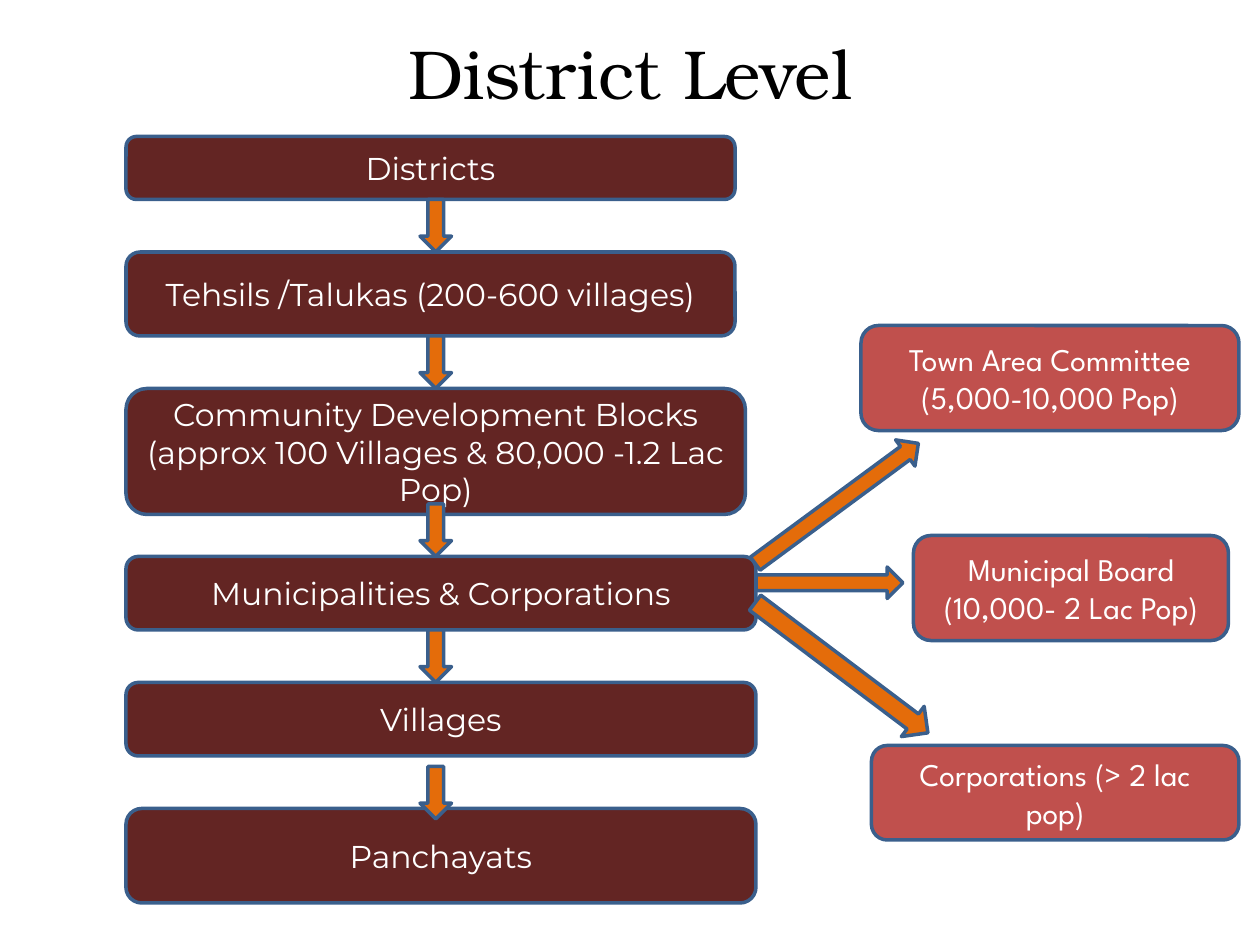
import pptx
import pptx.util
import pptx.dml.color
import pptx.enum.shapes
import pptx.enum.text

SHAPE = pptx.enum.shapes.MSO_SHAPE
COLS, ROWS = 120, 90


def rgb(value):
    """Turn a hex string into a colour."""
    return pptx.dml.color.RGBColor.from_string(value)


class Chart:
    """Style and current slide, placed on a grid of 120 by 90 cells."""

    LINE, ARROW, WHITE, BLACK = "3A5F8C", "E46C0A", "FFFFFF", "000000"

    def __init__(self, prs):
        self.s = prs.slides.add_slide(prs.slide_layouts[6])
        self.cw = prs.slide_width / COLS
        self.rh = prs.slide_height / ROWS

    def place(self, col, row, w, h):
        """Convert grid cells to lengths."""
        return [round(n) for n in (col * self.cw, row * self.rh, w * self.cw, h * self.rh)]

    def label(self, sp, text, font, size, color):
        """Centre one run of text in a shape."""
        tf = sp.text_frame
        tf.word_wrap = True
        tf.vertical_anchor = pptx.enum.text.MSO_ANCHOR.MIDDLE
        p = tf.paragraphs[0]
        p.alignment = pptx.enum.text.PP_ALIGN.CENTER
        r = p.add_run()
        r.text = text
        r.font.name = font
        r.font.size = pptx.util.Pt(size)
        r.font.color.rgb = rgb(color)

    def title(self, text, *cells):
        """Add the slide heading."""
        sp = self.s.shapes.add_textbox(*self.place(*cells))
        self.label(sp, text, "TeX Gyre Bonum", 39.6, self.BLACK)

    def shape(self, kind, fill, *cells):
        """Add a filled and outlined preset shape."""
        sp = self.s.shapes.add_shape(kind, *self.place(*cells))
        sp.shadow.inherit = False
        sp.fill.solid()
        sp.fill.fore_color.rgb = rgb(fill)
        sp.line.color.rgb = rgb(self.LINE)
        sp.line.width = pptx.util.Pt(2)
        return sp

    def box(self, text, fill, font, *cells):
        """Add a labelled rounded box."""
        sp = self.shape(SHAPE.ROUNDED_RECTANGLE, fill, *cells)
        self.label(sp, text, font, 18, self.WHITE)

    def arrow(self, x, y, length, width=3, angle=0):
        """Add a block arrow by its centre, pointing down before rotation."""
        sp = self.shape(SHAPE.DOWN_ARROW, self.ARROW,
                        x - width / 2, y - length / 2, width, length)
        sp.rotation = angle


LEVELS = [
    ("Districts", 13, 58, 6),
    ("Tehsils /Talukas (200-600 villages)", 24, 58, 8),
    ("Community Development Blocks (approx 100 Villages & 80,000 -1.2 Lac Pop)", 37, 59, 12),
    ("Municipalities & Corporations", 53, 60, 7),
    ("Villages", 65, 60, 7),
    ("Panchayats", 77, 60, 9),
]
URBAN_BODIES = [
    ("Town Area Committee (5,000-10,000 Pop)", 82, 31, 36, 10),
    ("Municipal Board (10,000- 2 Lac Pop)", 87, 51, 30, 10),
    ("Corporations (> 2 lac pop)", 83, 71, 35, 9),
]
DOWN_ARROW_TOPS = [19, 32, 48, 60, 73]
BRANCHES = [
    (79.7, 47.95, 19.3, 3.1, 233.6),
    (79, 55.5, 14, 3, 270),
    (80.15, 63.6, 20.6, 3.6, 307),
]


def main():
    prs = pptx.Presentation()
    prs.slide_width = pptx.util.Inches(10)
    prs.slide_height = pptx.util.Inches(7.5)
    chart = Chart(prs)
    chart.title("District Level", 6, 3.6, 108, 6.4)
    for text, row, w, h in LEVELS:
        chart.box(text, "632523", "Montserrat", 12, row, w, h)
    for text, *cells in URBAN_BODIES:
        chart.box(text, "C0504D", "League Spartan", *cells)
    for top in DOWN_ARROW_TOPS:
        chart.arrow(41.5, top + 2.5, 5)
    for branch in BRANCHES:
        chart.arrow(*branch)
    prs.save("out.pptx")


if __name__ == "__main__":
    main()
